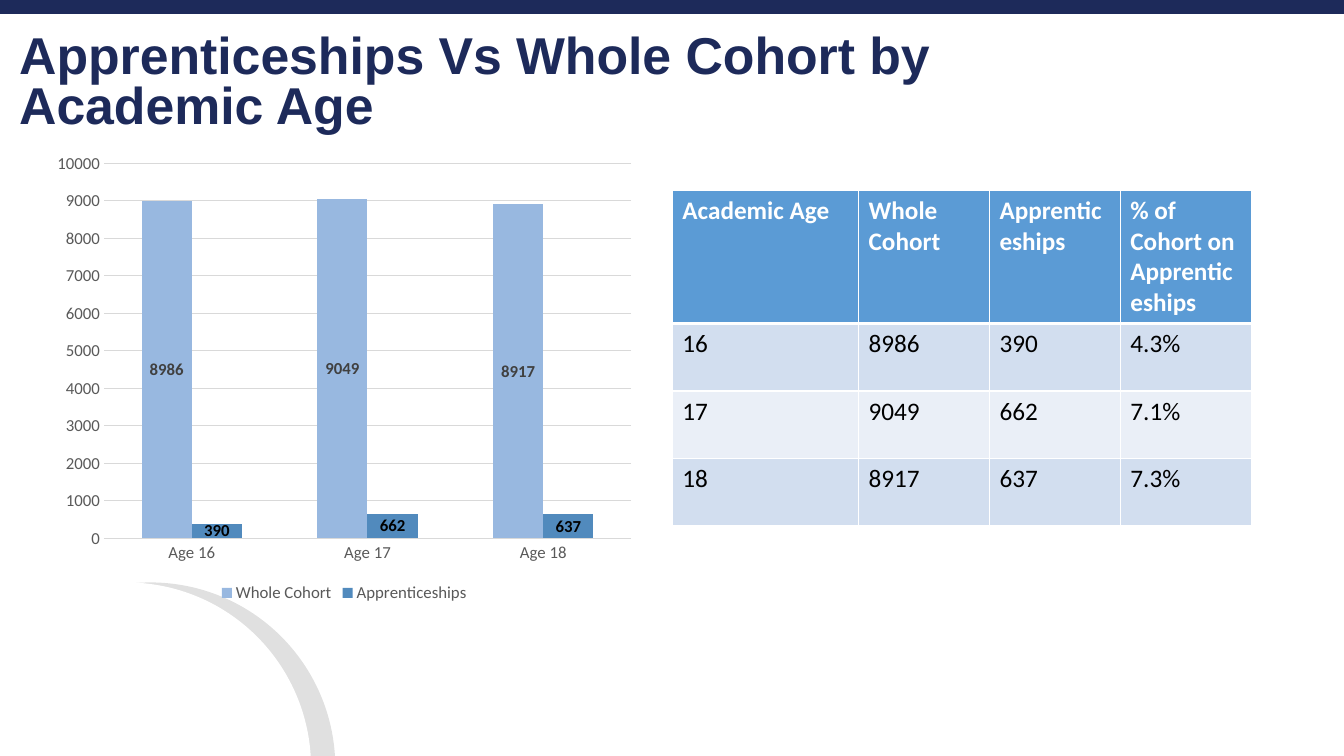
from dataclasses import dataclass

from lxml import etree
from pptx import Presentation
from pptx.chart.data import CategoryChartData
from pptx.dml.color import RGBColor
from pptx.enum.chart import (XL_CHART_TYPE, XL_LABEL_POSITION,
                             XL_LEGEND_POSITION, XL_TICK_MARK)
from pptx.enum.shapes import MSO_SHAPE
from pptx.enum.text import MSO_ANCHOR, MSO_AUTO_SIZE, PP_ALIGN
from pptx.oxml.ns import qn
from pptx.util import Pt

COLUMN_CLUSTERED = XL_CHART_TYPE.COLUMN_CLUSTERED
LABEL_CENTER = XL_LABEL_POSITION.CENTER
LEGEND_BOTTOM = XL_LEGEND_POSITION.BOTTOM
NO_TICK = XL_TICK_MARK.NONE
RECTANGLE, OVAL = MSO_SHAPE.RECTANGLE, MSO_SHAPE.OVAL
MIDDLE, LEFT = MSO_ANCHOR.MIDDLE, PP_ALIGN.LEFT
NO_AUTOFIT = MSO_AUTO_SIZE.NONE


@dataclass(frozen=True)
class Theme:
    navy: str = "1D2A5A"
    white: str = "FFFFFF"
    black: str = "000000"
    header: str = "5B9BD5"
    band_dark: str = "D2DEEF"
    band_light: str = "EAEFF7"
    grid: str = "D9D9D9"
    axis_text: str = "595959"
    label_text: str = "404040"
    cohort: str = "98B8E0"
    apprentice: str = "518ABD"
    title_font: str = "Arial"
    body_font: str = "Calibri"
    title_size: float = 37
    table_size: float = 18
    chart_size: float = 12


THEME = Theme()
SLIDE_WIDTH, SLIDE_HEIGHT = 960, 540
AGES = [16, 17, 18]
COHORT = [8986, 9049, 8917]
APPRENTICES = [390, 662, 637]
SHARES = ["4.3%", "7.1%", "7.3%"]


def rgb(color):
    return RGBColor.from_string(color)


def style_font(font, size, color, bold=False, name=THEME.body_font):
    font.name, font.size, font.bold = name, Pt(size), bold
    font.color.rgb = rgb(color)


def add_plain_shape(slide, kind, box, color):
    shape = slide.shapes.add_shape(kind, *map(Pt, box))
    shape.shadow.inherit = False
    shape.fill.solid()
    shape.fill.fore_color.rgb = rgb(color)
    shape.line.fill.background()
    return shape


def add_crescent(slide, box):
    """A faint disc, partly covered by a white one shifted to the left."""
    left, top, width, height = box
    disc = add_plain_shape(slide, OVAL, box, THEME.black)
    color = disc.fill._xPr.find(".//" + qn("a:srgbClr"))
    etree.SubElement(color, qn("a:alpha"), val="12000")
    add_plain_shape(slide, OVAL, (left - 17.3, top, width, height), THEME.white)


def add_top_bar(slide, box):
    bar = add_plain_shape(slide, RECTANGLE, box, THEME.navy)
    bar.line.color.rgb = rgb(THEME.navy)
    bar.line.width = Pt(1)


def add_title(slide, box):
    title = slide.shapes.title
    title.left, title.top, title.width, title.height = map(Pt, box)
    frame = title.text_frame
    frame.text = "Apprenticeships Vs Whole Cohort by Academic Age"
    frame.word_wrap = True
    frame.auto_size = NO_AUTOFIT
    frame.vertical_anchor = MIDDLE
    paragraph = frame.paragraphs[0]
    paragraph.alignment = LEFT
    paragraph.line_spacing = 0.8
    style_font(paragraph.font, THEME.title_size, THEME.navy, True, THEME.title_font)


def add_cohort_chart(slide, box):
    data = CategoryChartData()
    data.categories = [f"Age {age}" for age in AGES]
    data.add_series("Whole Cohort", COHORT)
    data.add_series("Apprenticeships", APPRENTICES)
    chart = slide.shapes.add_chart(COLUMN_CLUSTERED, *map(Pt, box), data).chart
    chart.has_title = False
    style_font(chart.font, THEME.chart_size, THEME.axis_text)

    # Legend
    chart.has_legend = True
    chart.legend.position = LEGEND_BOTTOM
    chart.legend.include_in_layout = False
    style_font(chart.legend.font, THEME.chart_size, THEME.axis_text)

    # Axes
    for axis in (chart.category_axis, chart.value_axis):
        axis.major_tick_mark = axis.minor_tick_mark = NO_TICK
        style_font(axis.tick_labels.font, THEME.chart_size, THEME.axis_text)
    value_axis = chart.value_axis
    value_axis.minimum_scale, value_axis.maximum_scale = 0, 10000
    value_axis.major_unit = 1000
    value_axis.format.line.fill.background()
    for line in (chart.category_axis.format.line, value_axis.major_gridlines.format.line):
        line.color.rgb = rgb(THEME.grid)
        line.width = Pt(0.75)

    # Columns and their labels
    plot = chart.plots[0]
    plot.gap_width, plot.overlap = 150, 0
    plot.vary_by_categories = False
    colors = [(THEME.cohort, THEME.label_text), (THEME.apprentice, THEME.black)]
    for series, (fill, text) in zip(plot.series, colors):
        series.format.fill.solid()
        series.format.fill.fore_color.rgb = rgb(fill)
        series.invert_if_negative = False
        labels = series.data_labels
        labels.show_value = True
        labels.position = LABEL_CENTER
        style_font(labels.font, THEME.chart_size, text, True)


def set_borders(cell, top, bottom):
    properties = cell._tc.get_or_add_tcPr()
    for side, width in (("L", 1), ("R", 1), ("T", top), ("B", bottom)):
        line = etree.SubElement(properties, qn(f"a:ln{side}"), w=str(Pt(width)))
        fill = etree.SubElement(line, qn("a:solidFill"))
        etree.SubElement(fill, qn("a:srgbClr"), val=THEME.white)


def add_cohort_table(slide, box):
    rows = [("Academic Age", "Whole Cohort", "Apprenticeships",
             "% of Cohort on Apprenticeships"),
            *zip(AGES, COHORT, APPRENTICES, SHARES)]
    table = slide.shapes.add_table(len(rows), len(rows[0]), *map(Pt, box)).table
    for column, width in zip(table.columns, (133, 93.5, 93.5, 93.5)):
        column.width = Pt(width)
    for index, values in enumerate(rows):
        is_header = index == 0
        table.rows[index].height = Pt(84 if is_header else 48.2)
        band = THEME.band_dark if index % 2 else THEME.band_light
        for column, value in enumerate(values):
            cell = table.cell(index, column)
            set_borders(cell, 3 if index == 1 else 1, 3 if is_header else 1)
            cell.fill.solid()
            cell.fill.fore_color.rgb = rgb(THEME.header if is_header else band)
            cell.text = str(value)
            style_font(cell.text_frame.paragraphs[0].font, THEME.table_size,
                       THEME.white if is_header else THEME.black, is_header)


def main():
    presentation = Presentation()
    presentation.slide_width = Pt(SLIDE_WIDTH)
    presentation.slide_height = Pt(SLIDE_HEIGHT)
    title_only = presentation.slide_layouts[5]
    slide = presentation.slides.add_slide(title_only)

    add_crescent(slide, (-24.5, 416, 264, 264))
    add_title(slide, (6.5, 21, 812, 78.5))
    add_top_bar(slide, (0, 0, SLIDE_WIDTH, 9.4))
    add_cohort_table(slide, (480.3, 136, 413.5, 238.3))
    add_cohort_chart(slide, (32.4, 103, 427, 330.5))
    presentation.save("out.pptx")


if __name__ == "__main__":
    main()
